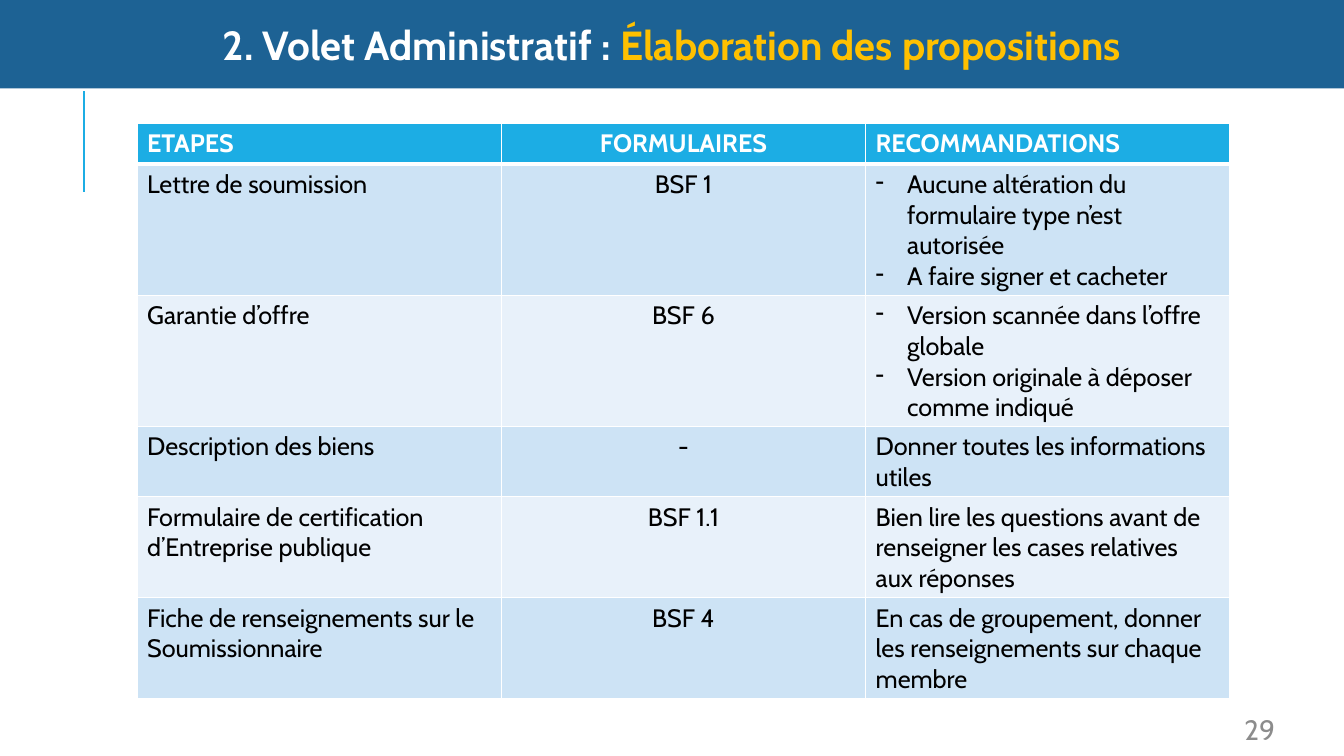
from dataclasses import dataclass

import lxml.etree
import pptx
import pptx.dml.color
import pptx.enum.shapes
import pptx.enum.text
import pptx.oxml.ns
import pptx.util

Pt = pptx.util.Pt
Alignment = pptx.enum.text.PP_ALIGN
qualified = pptx.oxml.ns.qn


@dataclass(frozen=True)
class Theme:
    font: str = "Cabin"
    white: str = "FFFFFF"
    black: str = "000000"
    banner: str = "1D6294"
    highlight: str = "FFC000"
    accent: str = "1CADE4"
    odd_row: str = "CDE3F5"
    even_row: str = "E8F1FA"
    muted: str = "8C8C8C"
    title_size: float = 29
    table_size: float = 18
    number_size: float = 20


@dataclass(frozen=True)
class Step:
    name: str
    form: str
    advice: tuple[str, ...]


THEME = Theme()
HEADINGS = ("ETAPES", "FORMULAIRES", "RECOMMANDATIONS")
STEPS = (
    Step("Lettre de soumission", "BSF 1",
         ("Aucune altération du formulaire type n’est autorisée", "A faire signer et cacheter")),
    Step("Garantie d’offre", "BSF 6",
         ("Version scannée dans l’offre globale", "Version originale à déposer comme indiqué")),
    Step("Description des biens", "-", ("Donner toutes les informations utiles",)),
    Step("Formulaire de certification d’Entreprise publique", "BSF 1.1",
         ("Bien lire les questions avant de renseigner les cases relatives aux réponses",)),
    Step("Fiche de renseignements sur le Soumissionnaire", "BSF 4",
         ("En cas de groupement, donner les renseignements sur chaque membre",)),
)
TABLE_LEFT, TABLE_TOP, COLUMN_WIDTH, ROW_HEIGHT = 97.9, 88, 260.2, 29.2
BULLET_INDENT = 22.5


def rgb(color: str) -> pptx.dml.color.RGBColor:
    return pptx.dml.color.RGBColor.from_string(color)


def write(paragraph, text: str, *, size: float, color: str, bold: bool = False,
          alignment: Alignment = Alignment.LEFT, bullet: str = "") -> None:
    paragraph.alignment = alignment
    run = paragraph.add_run()
    run.text = text
    run.font.name = THEME.font
    run.font.size = Pt(size)
    run.font.bold = bold
    run.font.color.rgb = rgb(color)
    if bullet:
        properties = paragraph._p.get_or_add_pPr()
        properties.set("marL", str(Pt(BULLET_INDENT)))
        properties.set("indent", str(-Pt(BULLET_INDENT)))
        lxml.etree.SubElement(properties, qualified("a:buChar"), char=bullet)


def set_margins(text_frame, horizontal: float, vertical: float) -> None:
    text_frame.margin_left = text_frame.margin_right = Pt(horizontal)
    text_frame.margin_top = text_frame.margin_bottom = Pt(vertical)
    text_frame.word_wrap = True


def add_banner(slide, width: float) -> None:
    banner = slide.shapes.add_shape(
        pptx.enum.shapes.MSO_SHAPE.RECTANGLE, Pt(0), Pt(0), Pt(width), Pt(63.2))
    banner.shadow.inherit = False
    banner.fill.solid()
    banner.fill.fore_color.rgb = rgb(THEME.banner)
    banner.line.fill.background()
    text_frame = banner.text_frame
    set_margins(text_frame, 7.9, 4.3)
    text_frame.vertical_anchor = pptx.enum.text.MSO_ANCHOR.MIDDLE
    for text, color in (("2. Volet Administratif : ", THEME.white),
                        ("Élaboration des propositions", THEME.highlight)):
        write(text_frame.paragraphs[0], text, size=THEME.title_size, color=color,
              bold=True, alignment=Alignment.CENTER)


def add_side_line(slide) -> None:
    line = slide.shapes.add_connector(
        pptx.enum.shapes.MSO_CONNECTOR.STRAIGHT, Pt(60), Pt(136.8), Pt(60), Pt(64.8))
    line.line.color.rgb = rgb(THEME.accent)
    line.line.width = Pt(1.5)
    lxml.etree.SubElement(line._element.spPr, qualified("a:effectLst"))


def add_slide_number(slide, number: str) -> None:
    box = slide.shapes.add_textbox(Pt(878.4), Pt(509), Pt(32.4), Pt(24.5))
    set_margins(box.text_frame, 0, 0)
    box.text_frame.auto_size = pptx.enum.text.MSO_AUTO_SIZE.SHAPE_TO_FIT_TEXT
    write(box.text_frame.paragraphs[0], number, size=THEME.number_size,
          color=THEME.muted, alignment=Alignment.RIGHT)


def format_cell(cell, fill: str, bottom_width: float) -> None:
    cell.fill.solid()
    cell.fill.fore_color.rgb = rgb(fill)
    properties = cell._tc.get_or_add_tcPr()
    widths = {"a:lnL": 1, "a:lnR": 1, "a:lnT": 1, "a:lnB": bottom_width}
    for position, (tag, width) in enumerate(widths.items()):
        border = lxml.etree.Element(qualified(tag), w=str(Pt(width)))
        solid = lxml.etree.SubElement(border, qualified("a:solidFill"))
        lxml.etree.SubElement(solid, qualified("a:srgbClr"), val=THEME.white)
        properties.insert(position, border)


def add_steps_table(slide) -> None:
    rows = [tuple((heading,) for heading in HEADINGS)]
    rows += [((step.name,), (step.form,), step.advice) for step in STEPS]
    frame = slide.shapes.add_table(
        len(rows), len(HEADINGS), Pt(TABLE_LEFT), Pt(TABLE_TOP),
        Pt(COLUMN_WIDTH * len(HEADINGS)), Pt(ROW_HEIGHT * len(rows)))
    table = frame.table
    for row_index, row in enumerate(rows):
        header = row_index == 0
        band = THEME.odd_row if row_index % 2 else THEME.even_row
        for column_index, texts in enumerate(row):
            cell = table.cell(row_index, column_index)
            format_cell(cell, THEME.accent if header else band,
                        3 if header else 1)
            for text_index, text in enumerate(texts):
                text_frame = cell.text_frame
                paragraph = text_frame.add_paragraph() if text_index else text_frame.paragraphs[0]
                write(paragraph, text, size=THEME.table_size, bold=header,
                      color=THEME.white if header else THEME.black,
                      alignment=Alignment.CENTER if column_index == 1 else Alignment.LEFT,
                      bullet="-" if len(texts) > 1 else "")
    frame.height = Pt(389.5)


def main() -> None:
    presentation = pptx.Presentation()
    width = 960
    presentation.slide_width = Pt(width)
    presentation.slide_height = Pt(540)
    slide = presentation.slides.add_slide(presentation.slide_layouts[6])
    add_side_line(slide)
    add_banner(slide, width)
    add_slide_number(slide, "29")
    add_steps_table(slide)
    presentation.save("out.pptx")


if __name__ == "__main__":
    main()
